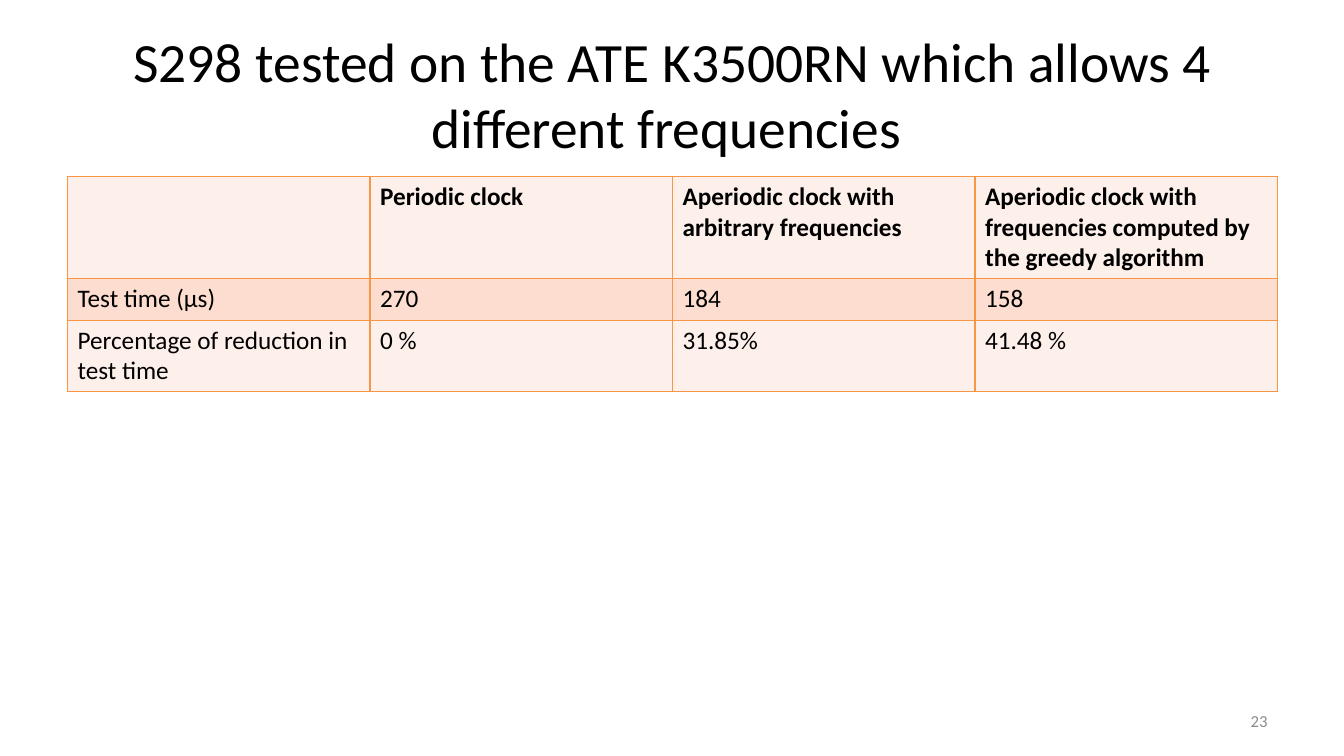
from dataclasses import dataclass

from lxml import etree
from pptx import Presentation
from pptx import util as u
from pptx.dml.color import RGBColor
from pptx.enum import text
from pptx.oxml import ns

EMU_PER_PX = 9144
FONT = "Calibri"
BLACK = "000000"
GREY = "8C8C8C"
ORANGE = "F79646"
LIGHT_PEACH = "FDEFE9"
PEACH = "FCDDCF"


@dataclass(frozen=True)
class Box:
    left: int
    top: int
    width: int
    height: int

    def emu(self) -> tuple[int, ...]:
        return tuple(px(n) for n in (self.left, self.top, self.width, self.height))


@dataclass(frozen=True)
class Row:
    height: int
    fill: str
    bold: bool
    values: tuple[str, ...]


TITLE_BOX = Box(67, 30, 1200, 125)
TABLE_BOX = Box(67, 175, 1200, 213)
NUMBER_BOX = Box(956, 695, 311, 40)

ROWS = (
    Row(101, LIGHT_PEACH, True, (
        "",
        "Periodic clock",
        "Aperiodic clock with arbitrary frequencies",
        "Aperiodic clock with frequencies computed by the greedy algorithm",
    )),
    Row(41, PEACH, False, ("Test time (μs)", "270", "184", "158")),
    Row(71, LIGHT_PEACH, False, (
        "Percentage of reduction in test time", "0 %", "31.85%", "41.48 %",
    )),
)


def px(length: int) -> int:
    return u.Emu(length * EMU_PER_PX)


def color(value: str) -> RGBColor:
    return RGBColor.from_string(value)


def format_text(frame, size: float, ink: str, bold: bool = False, align=None) -> None:
    for paragraph in frame.paragraphs:
        paragraph.alignment = align
        for run in paragraph.runs:
            run.font.name = FONT
            run.font.size = u.Pt(size)
            run.font.bold = bold
            run.font.color.rgb = color(ink)


def add_borders(cell, ink: str) -> None:
    properties = cell._tc.get_or_add_tcPr()
    for index, side in enumerate(("lnL", "lnR", "lnT", "lnB")):
        line = etree.Element(ns.qn(f"a:{side}"), w=str(u.Pt(1)))
        fill = etree.SubElement(line, ns.qn("a:solidFill"))
        etree.SubElement(fill, ns.qn("a:srgbClr"), val=ink)
        properties.insert(index, line)


def add_title(slide) -> None:
    title = slide.shapes.title
    title.left, title.top, title.width, title.height = TITLE_BOX.emu()
    frame = title.text_frame
    frame.text = "S298 tested on the ATE K3500RN which allows 4 different frequencies "
    frame.word_wrap = True
    frame.auto_size = text.MSO_AUTO_SIZE.NONE
    frame.vertical_anchor = text.MSO_ANCHOR.MIDDLE
    format_text(frame, 39.6, BLACK, align=text.PP_ALIGN.CENTER)


def add_results_table(slide) -> None:
    column_count = len(ROWS[0].values)
    table = slide.shapes.add_table(len(ROWS), column_count, *TABLE_BOX.emu()).table
    for column in table.columns:
        column.width = px(TABLE_BOX.width // column_count)
    for table_row, row in zip(table.rows, ROWS):
        table_row.height = px(row.height)
        for cell, value in zip(table_row.cells, row.values):
            cell.fill.solid()
            cell.fill.fore_color.rgb = color(row.fill)
            cell.text_frame.text = value
            format_text(cell.text_frame, 18, BLACK, row.bold)
            add_borders(cell, ORANGE)


def add_slide_number(slide) -> None:
    frame = slide.shapes.add_textbox(*NUMBER_BOX.emu()).text_frame
    frame.text = "23"
    frame.word_wrap = True
    frame.vertical_anchor = text.MSO_ANCHOR.MIDDLE
    format_text(frame, 12, GREY, align=text.PP_ALIGN.RIGHT)


def main() -> None:
    presentation = Presentation()
    presentation.slide_width = px(1333)
    presentation.slide_height = px(750)
    slide = presentation.slides.add_slide(presentation.slide_layouts[5])
    add_title(slide)
    add_results_table(slide)
    add_slide_number(slide)
    presentation.save("out.pptx")


if __name__ == "__main__":
    main()
